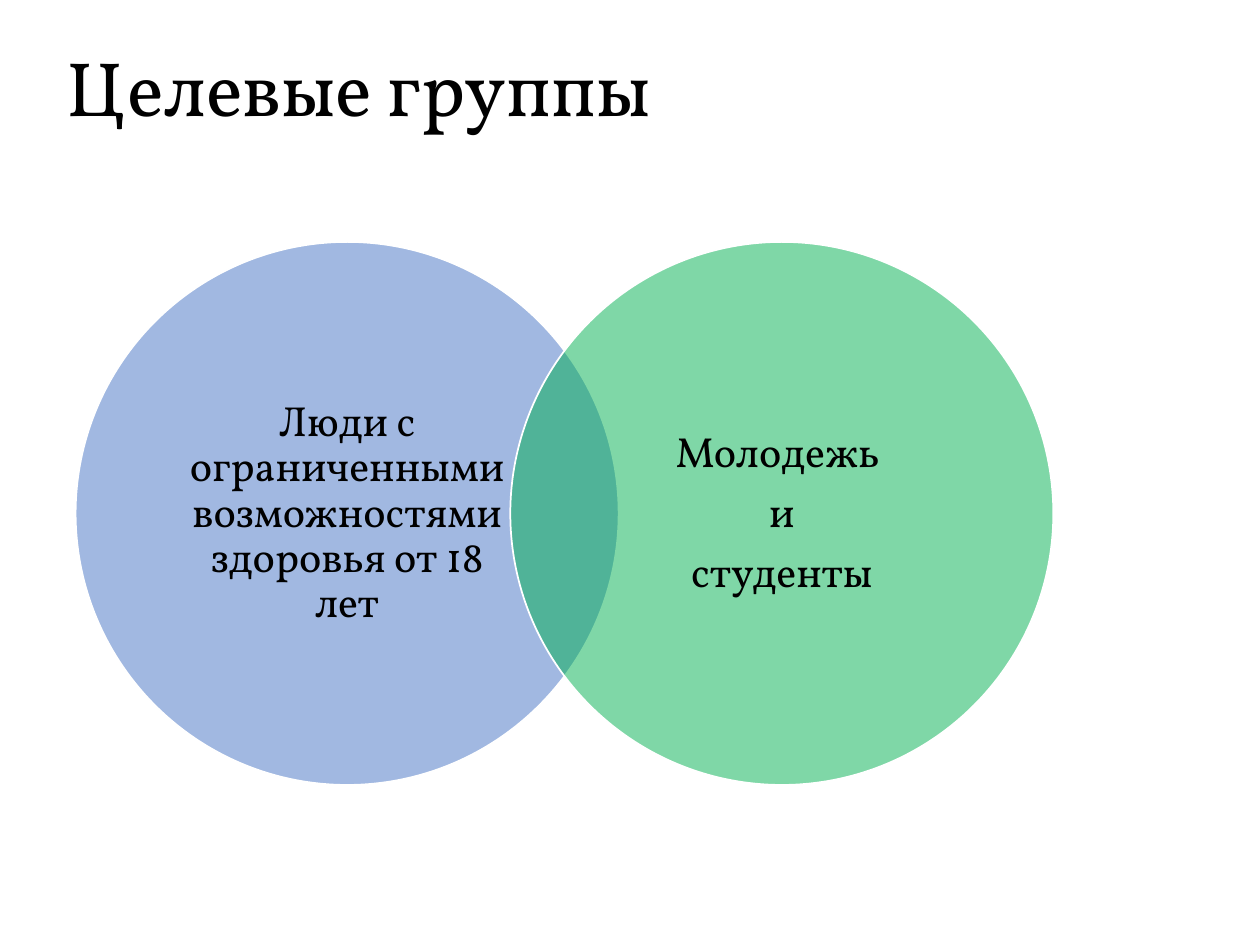
from pptx import Presentation
from pptx.dml.color import RGBColor
from pptx.enum.shapes import MSO_SHAPE as Shape
from pptx.enum.text import MSO_ANCHOR as Anchor, PP_ALIGN as Align
from pptx.oxml.ns import qn
from pptx.util import Inches, Pt
from lxml.etree import SubElement

COLORS = {"text": "000000", "outline": "FFFFFF", "people": "4472C4", "youth": "00B050"}
FONT = "Vollkorn"
DIAMETER = 4.31
LABEL_SIZE = 3.05
CIRCLE_TOP = 1.92
FIRST_LEFT = 0.6
STEP = 3.45

GROUPS = [
    ("people", ["Люди с ограниченными возможностями здоровья от 18 лет"]),
    ("youth", ["Молодежь ", "и", " студенты "]),
]


def color(name):
    return RGBColor.from_string(COLORS[name])


def write(frame, lines, size, align=Align.LEFT, space_after=0):
    frame.word_wrap = True
    frame.vertical_anchor = Anchor.MIDDLE
    for index, line in enumerate(lines):
        para = frame.add_paragraph() if index else frame.paragraphs[0]
        para.alignment = align
        para.line_spacing = 0.9
        para.space_before = Pt(0)
        para.space_after = Pt(space_after)
        span = para.add_run()
        span.text = line
        span.font.name = FONT
        span.font.size = Pt(size)
        span.font.color.rgb = color("text")


class Slide:
    def __init__(self, deck):
        self.page = deck.slides.add_slide(deck.slide_layouts[5])

    def title(self, text, left, top, width, height):
        box = self.page.shapes.title
        box.left, box.top = Inches(left), Inches(top)
        box.width, box.height = Inches(width), Inches(height)
        write(box.text_frame, [text], 44)

    def circle(self, left, top, fill):
        """Add a half-transparent circle with a white outline."""
        size = Inches(DIAMETER)
        disc = self.page.shapes.add_shape(Shape.OVAL, Inches(left), Inches(top), size, size)
        disc.shadow.inherit = False
        disc.fill.solid()
        disc.fill.fore_color.rgb = color(fill)
        tint = disc.fill._xPr.find(qn("a:solidFill"))[0]
        SubElement(tint, qn("a:alpha")).set("val", "50000")
        disc.line.color.rgb = color("outline")
        disc.line.width = Pt(1)

    def label(self, lines, left, top):
        size = Inches(LABEL_SIZE)
        box = self.page.shapes.add_textbox(Inches(left), Inches(top), size, size)
        frame = box.text_frame
        frame.margin_left = frame.margin_right = Inches(0.24)
        frame.margin_top = frame.margin_bottom = Inches(0.03)
        write(frame, lines, 24, align=Align.CENTER, space_after=8.4)


def main():
    deck = Presentation()
    deck.slide_width, deck.slide_height = Inches(10), Inches(7.5)
    slide = Slide(deck)
    slide.title("Целевые группы", 0.43, 0, 8.62, 1.45)
    inset = (DIAMETER - LABEL_SIZE) / 2
    for index, (fill, lines) in enumerate(GROUPS):
        left = FIRST_LEFT + index * STEP
        slide.circle(left, CIRCLE_TOP, fill)
        slide.label(lines, left + inset, CIRCLE_TOP + inset)
    deck.save("out.pptx")


if __name__ == "__main__":
    main()
